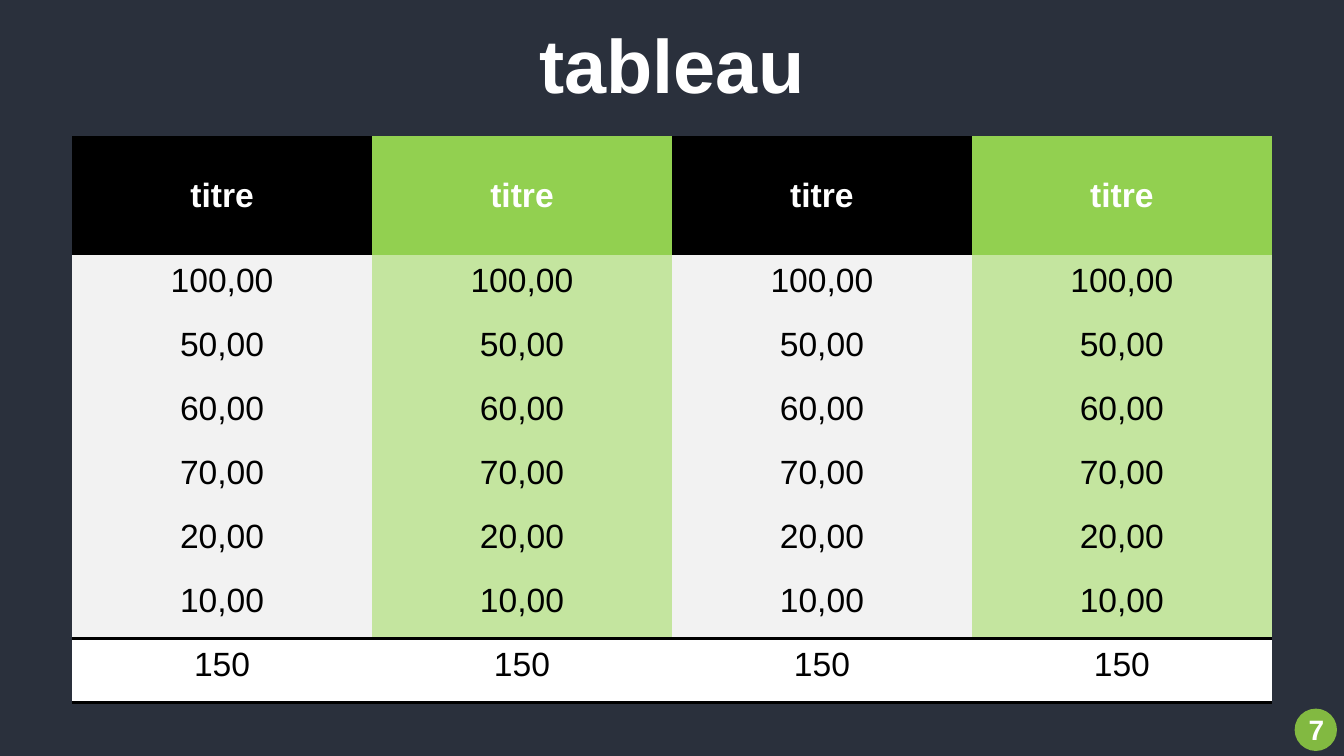
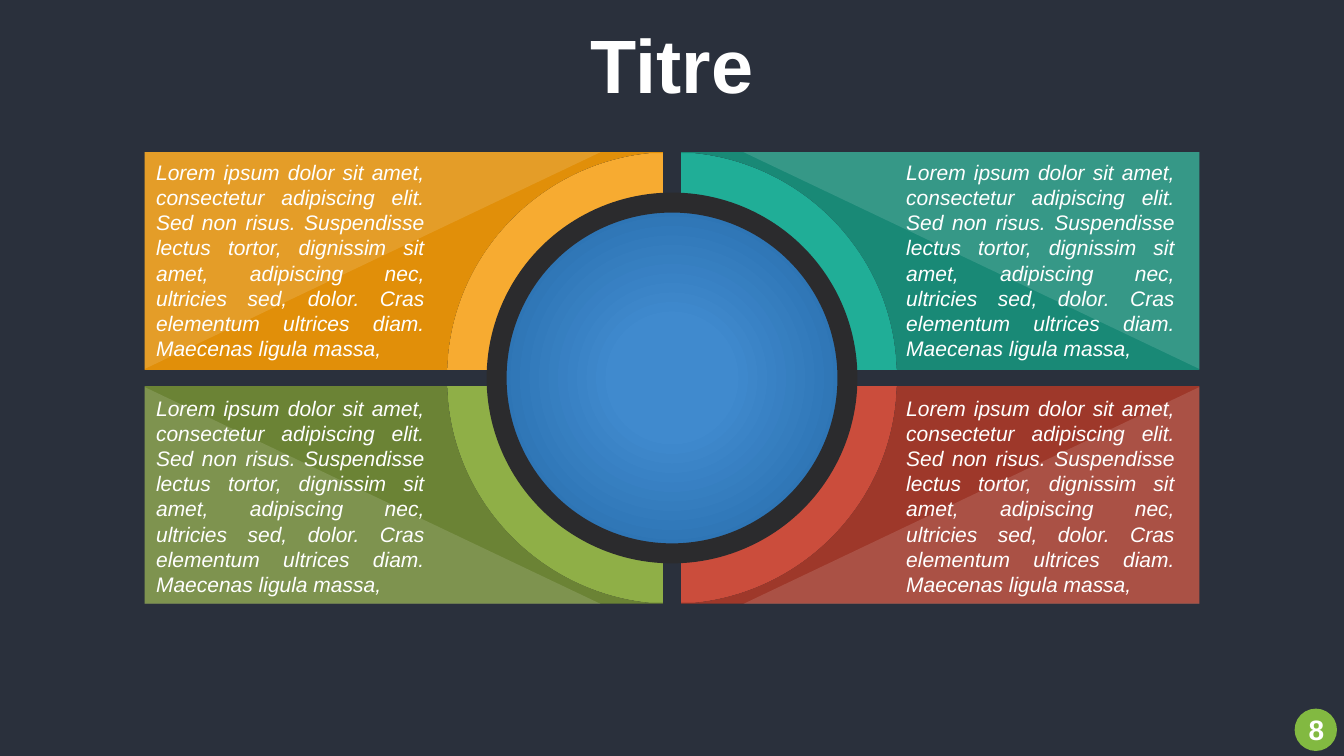
from dataclasses import dataclass

import pptx
import pptx.dml.color
import pptx.enum.shapes
import pptx.enum.text
import pptx.oxml.ns
import pptx.presentation
import pptx.shapes.base
import pptx.slide
import pptx.table
import pptx.text.text
import pptx.util
from lxml import etree

Inches = pptx.util.Inches
Pt = pptx.util.Pt
qn = pptx.oxml.ns.qn
Align = pptx.enum.text.PP_ALIGN
Anchor = pptx.enum.text.MSO_ANCHOR
Point = tuple[float, float]


@dataclass(frozen=True)
class Theme:
    font: str = "Arial"
    background: str = "2A303C"
    light: str = "FFFFFF"
    dark: str = "000000"
    badge: str = "82B941"
    header_fills: tuple[str, str] = ("000000", "92D050")
    body_fills: tuple[str, str] = ("F2F2F2", "C4E59F")
    circle_line: str = "2B2B2D"
    circle_stops: tuple[tuple[int, str], ...] = (
        (0, "408ACE"), (23, "408ACE"), (69, "2E75B5"), (97, "2B6DA9"), (100, "2B6DA9"))
    shine_opacity: int = 13
    title_size: float = 54
    table_size: float = 24
    badge_size: float = 20
    body_size: float = 15
    rule_width: float = 3
    circle_line_width: float = 14.25


@dataclass(frozen=True)
class Quadrant:
    """One corner of the diagram; the signs give its side of the centre."""
    side: int
    level: int
    ring: str
    panel: str
    text_left: float


THEME = Theme()
SLIDE_WIDTH, SLIDE_HEIGHT = 13.33, 7.5

# Table content
HEADER = "titre"
AMOUNTS = ("100,00", "50,00", "60,00", "70,00", "20,00", "10,00")
TOTAL = "150"
COLUMN_COUNT = 4
TABLE_WIDTH, HEADER_HEIGHT, BODY_HEIGHT = 11.9, 1.18, 4.44
TABLE_LEFT, TABLE_TOP = (SLIDE_WIDTH - TABLE_WIDTH) / 2, 1.35
NO_STYLE = "{2D5ABB26-0587-4C30-8999-92F81FD0307C}"

# Diagram geometry, measured from the centre
CENTRE: Point = (SLIDE_WIDTH / 2, 3.75)
GAP_X, GAP_Y = 0.09, 0.08
RING_RADIUS, CIRCLE_RADIUS = 2.23, 1.74
PANEL_REACH, PANEL_HEIGHT, SHINE_START = 5.23, 2.24, 0.71
TEXT_WIDTH, TEXT_HEIGHT, TEXT_OFFSET = 2.86, 1.87, 1.17
# Outer edge of a ring: its second to fifth points form one Bezier curve
RING_EDGE: list[Point] = [
    (GAP_X, RING_RADIUS), (0.23, RING_RADIUS), (1.28, 2.12), (2.12, 1.28),
    (2.22, 0.23), (RING_RADIUS, GAP_Y)]
QUADRANTS = (
    Quadrant(-1, -1, "F7AB31", "E18F09", 1.45),
    Quadrant(1, -1, "20AE97", "198976", 8.89),
    Quadrant(-1, 1, "8FAF47", "6B8335", 1.45),
    Quadrant(1, 1, "CB4D3C", "9E382A", 8.89),
)
BODY = (
    "Lorem ipsum dolor sit amet, consectetur adipiscing elit. Sed non risus. "
    "Suspendisse lectus tortor, dignissim sit amet, adipiscing nec, ultricies sed, "
    "dolor. Cras elementum ultrices diam. Maecenas ligula massa,"
)


def rgb(value: str) -> pptx.dml.color.RGBColor:
    return pptx.dml.color.RGBColor.from_string(value)


# Text and fills
def set_text(frame: pptx.text.text.TextFrame, text: str, size: float, align: Align,
             color: str = THEME.light, bold: bool = False, italic: bool = False) -> None:
    frame.text = text
    para = frame.paragraphs[0]
    para.alignment = align
    font = para.runs[0].font
    font.name, font.size = THEME.font, Pt(size)
    font.bold, font.italic = bold, italic
    font.color.rgb = rgb(color)


def add_text(page: pptx.slide.Slide, left: float, top: float, width: float,
             height: float) -> pptx.text.text.TextFrame:
    box = page.shapes.add_textbox(Inches(left), Inches(top), Inches(width), Inches(height))
    box.text_frame.word_wrap = True
    return box.text_frame


def paint(shape: pptx.shapes.base.BaseShape, color: str) -> None:
    shape.shadow.inherit = False
    shape.fill.solid()
    shape.fill.fore_color.rgb = rgb(color)
    shape.line.fill.background()


def set_opacity(shape: pptx.shapes.base.BaseShape, percent: int) -> None:
    color = shape.element.spPr.find(qn("a:solidFill")).find(qn("a:srgbClr"))
    etree.SubElement(color, qn("a:alpha"), val=str(percent * 1000))


def set_radial_fill(shape: pptx.shapes.base.BaseShape) -> None:
    gradient = etree.Element(qn("a:gradFill"), rotWithShape="1")
    stops = etree.SubElement(gradient, qn("a:gsLst"))
    for position, color in THEME.circle_stops:
        stop = etree.SubElement(stops, qn("a:gs"), pos=str(position * 1000))
        etree.SubElement(stop, qn("a:srgbClr"), val=color)
    shade = etree.SubElement(gradient, qn("a:path"), {"path": "circle"})
    etree.SubElement(shade, qn("a:fillToRect"), dict.fromkeys("ltrb", "50000"))
    shape.element.spPr.find(qn("a:prstGeom")).addnext(gradient)


# Parts shared by the slides
def add_page(deck: pptx.presentation.Presentation, title: str) -> pptx.slide.Slide:
    page = deck.slides.add_slide(deck.slide_layouts[6])
    set_text(add_text(page, 4.16, 0.13, 5.01, 1.01), title, THEME.title_size,
             Align.CENTER, bold=True)
    return page


def add_badge(page: pptx.slide.Slide, number: int) -> None:
    badge = page.shapes.add_shape(pptx.enum.shapes.MSO_SHAPE.OVAL, Inches(12.84),
                                  Inches(7.03), Inches(0.42), Inches(0.42))
    paint(badge, THEME.badge)
    frame = add_text(page, 12.88, 7.02, 0.34, 0.44)
    frame.vertical_anchor = Anchor.MIDDLE
    set_text(frame, str(number), THEME.badge_size, Align.RIGHT, bold=True)


# Table slide
def add_rules(cell: pptx.table._Cell, edges: tuple[str, ...]) -> None:
    properties = cell._tc.get_or_add_tcPr()
    for index, edge in enumerate(edges):
        line = etree.Element(qn(f"a:ln{edge}"), w=str(Pt(THEME.rule_width)))
        fill = etree.SubElement(line, qn("a:solidFill"))
        etree.SubElement(fill, qn("a:srgbClr"), val=THEME.dark)
        properties.insert(index, line)


def add_amounts(page: pptx.slide.Slide) -> None:
    labels = (HEADER, *AMOUNTS, TOTAL)
    last = len(labels) - 1
    table = page.shapes.add_table(
        len(labels), COLUMN_COUNT, Inches(TABLE_LEFT), Inches(TABLE_TOP),
        Inches(TABLE_WIDTH), Inches(HEADER_HEIGHT + BODY_HEIGHT)).table
    table.first_row = table.horz_banding = False
    table._tbl.tblPr.find(qn("a:tableStyleId")).text = NO_STYLE
    for column in table.columns:
        column.width = Inches(TABLE_WIDTH / COLUMN_COUNT)
    for row_index, label in enumerate(labels):
        is_header = row_index == 0
        table.rows[row_index].height = Inches(HEADER_HEIGHT if is_header else BODY_HEIGHT / last)
        fills = THEME.header_fills if is_header else THEME.body_fills
        for column_index in range(COLUMN_COUNT):
            cell = table.cell(row_index, column_index)
            cell.margin_left = cell.margin_right = Inches(0.13)
            cell.margin_top = cell.margin_bottom = Inches(0.07)
            cell.vertical_anchor = Anchor.MIDDLE if is_header else Anchor.TOP
            fill = THEME.light if row_index == last else fills[column_index % 2]
            cell.fill.solid()
            cell.fill.fore_color.rgb = rgb(fill)
            set_text(cell.text_frame, label, THEME.table_size, Align.CENTER,
                     THEME.light if is_header else THEME.dark, bold=is_header)
            if row_index == last:
                add_rules(cell, ("T", "B"))
            elif row_index == last - 1:
                add_rules(cell, ("B",))


# Diagram slide
def add_outline(page: pptx.slide.Slide, quadrant: Quadrant, points: list[Point],
                color: str) -> pptx.shapes.base.BaseShape:
    placed = [(Inches(CENTRE[0] + quadrant.side * x), Inches(CENTRE[1] + quadrant.level * y))
              for x, y in points]
    builder = page.shapes.build_freeform(*placed[0])
    builder.add_line_segments(placed[1:], close=True)
    shape = builder.convert_to_shape()
    paint(shape, color)
    return shape


def curve_ring_edge(shape: pptx.shapes.base.BaseShape) -> None:
    """Turn the three straight segments of the ring edge into one curve."""
    segments = list(shape.element.spPr.iter(qn("a:lnTo")))[1:4]
    curve = etree.Element(qn("a:cubicBezTo"))
    segments[0].addprevious(curve)
    for segment in segments:
        curve.append(segment[0])
        segment.getparent().remove(segment)


def add_quadrant(page: pptx.slide.Slide, quadrant: Quadrant) -> None:
    corner = (PANEL_REACH, PANEL_HEIGHT)
    ring = add_outline(page, quadrant, RING_EDGE + [(GAP_X, GAP_Y)], quadrant.ring)
    panel = add_outline(
        page, quadrant,
        RING_EDGE + [(PANEL_REACH, GAP_Y), corner, (GAP_X, PANEL_HEIGHT)], quadrant.panel)
    for shape in (ring, panel):
        curve_ring_edge(shape)
    shine = add_outline(page, quadrant,
                        [corner, (SHINE_START, PANEL_HEIGHT), (PANEL_REACH, GAP_X)], THEME.light)
    set_opacity(shine, THEME.shine_opacity)
    top = CENTRE[1] + quadrant.level * TEXT_OFFSET - TEXT_HEIGHT / 2
    frame = add_text(page, quadrant.text_left, top, TEXT_WIDTH, TEXT_HEIGHT)
    frame.vertical_anchor = Anchor.MIDDLE
    set_text(frame, BODY, THEME.body_size, Align.JUSTIFY, italic=True)


def add_diagram(page: pptx.slide.Slide) -> None:
    for quadrant in QUADRANTS:
        add_quadrant(page, quadrant)
    circle = page.shapes.add_shape(
        pptx.enum.shapes.MSO_SHAPE.OVAL,
        Inches(CENTRE[0] - CIRCLE_RADIUS), Inches(CENTRE[1] - CIRCLE_RADIUS),
        Inches(2 * CIRCLE_RADIUS), Inches(2 * CIRCLE_RADIUS))
    circle.shadow.inherit = False
    set_radial_fill(circle)
    circle.line.color.rgb = rgb(THEME.circle_line)
    circle.line.width = Pt(THEME.circle_line_width)


def main() -> None:
    deck = pptx.Presentation()
    deck.slide_width, deck.slide_height = Inches(SLIDE_WIDTH), Inches(SLIDE_HEIGHT)
    background = deck.slide_master.background.fill
    background.solid()
    background.fore_color.rgb = rgb(THEME.background)
    contents = (("tableau", add_amounts), ("Titre", add_diagram))
    for number, (title, add_content) in enumerate(contents, start=7):
        page = add_page(deck, title)
        add_content(page)
        add_badge(page, number)
    deck.save("out.pptx")


if __name__ == "__main__":
    main()
